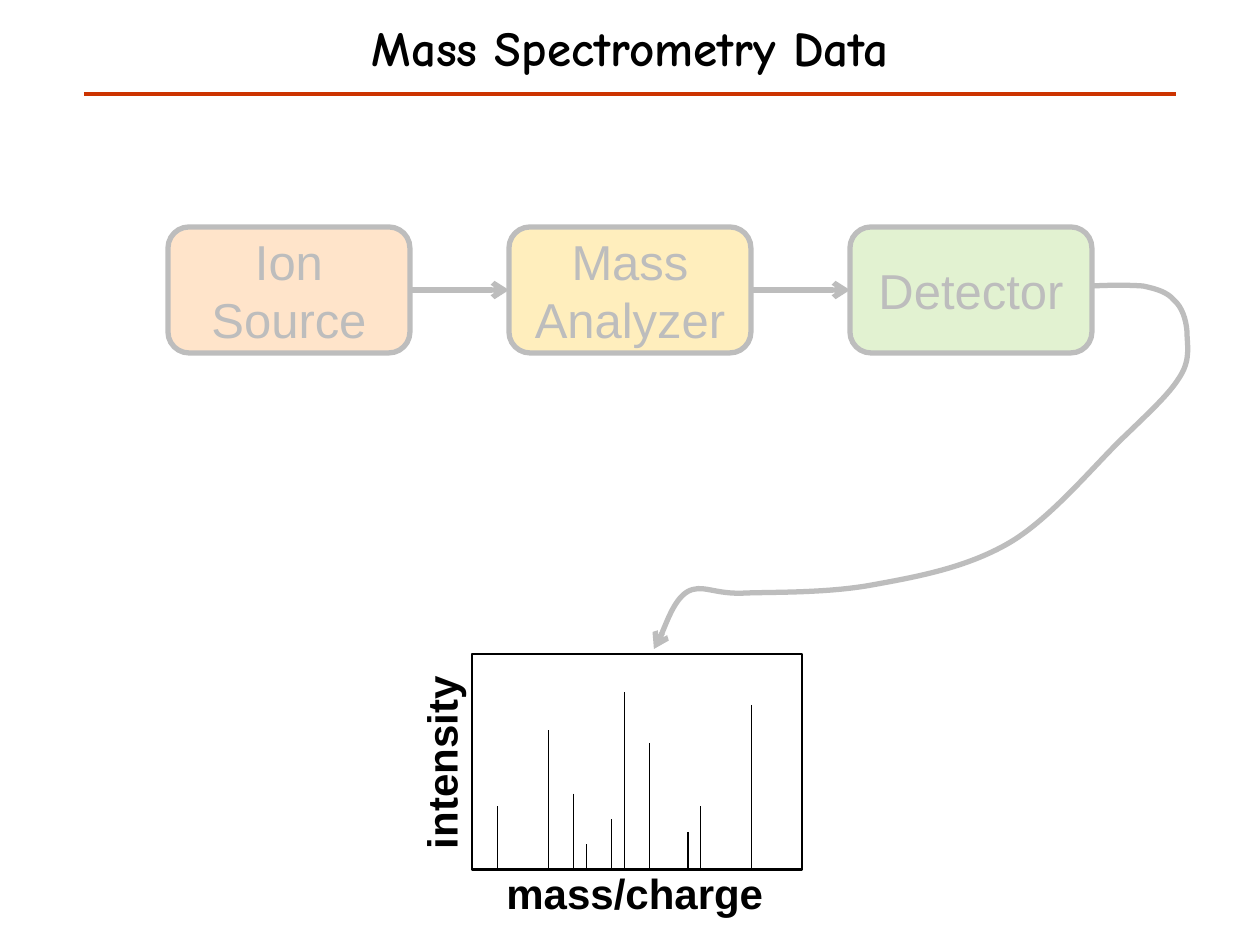
from itertools import pairwise

from lxml.etree import SubElement
from pptx import Presentation
from pptx.dml.color import RGBColor
from pptx.enum.shapes import MSO_CONNECTOR, MSO_SHAPE as Shape
from pptx.enum.text import MSO_ANCHOR, MSO_AUTO_SIZE, PP_ALIGN
from pptx.oxml.ns import qn
from pptx.util import Emu, Pt

PX = 914400 / 126
COLORS = {
    "ink": "000000", "paper": "FFFFFF", "rule": "CC3300",
    "source": "FF9933", "analyzer": "FFC000", "detector": "92D050",
}

STAGES = [("Ion Source", "source"), ("Mass Analyzer", "analyzer"), ("Detector", "detector")]
STAGE_LEFT, STAGE_TOP, STAGE_PITCH = 168, 227, 341
STAGE_WIDTH, STAGE_HEIGHT = 242, 126

# Spectrum grid: (mass/charge, intensity) of each peak, in steps
GRID_STEP = 12.7
GRID_COLUMNS, GRID_ROWS = 26, 17
SPECTRUM_LEFT, SPECTRUM_TOP = 472, 654
PEAKS = [(2, 5), (6, 11), (8, 6), (9, 2), (11, 4),
         (12, 14), (14, 10), (17, 3), (18, 5), (22, 13)]

# Start point, then three points for each cubic curve
SIGNAL_ROUTE = [
    (1092, 286),
    (1110, 285), (1129, 285), (1143, 286),
    (1157, 289), (1167, 292), (1174, 300),
    (1182, 307), (1186, 319), (1187, 331),
    (1187, 344), (1191, 358), (1181, 375),
    (1171, 392), (1155, 407), (1126, 435),
    (1097, 462), (1052, 518), (1009, 543),
    (966, 568), (916, 577), (872, 585),
    (828, 593), (776, 592), (746, 593),
    (714, 595), (702, 583), (687, 592),
    (673, 601), (663, 635), (656, 645),
    (651, 654), (653, 651), (654, 649),
]


def px(*lengths):
    return [Emu(round(length * PX)) for length in lengths]


def rgb(name):
    return RGBColor.from_string(COLORS[name])


def style_line(line, width, color="ink", arrow=False):
    line.color.rgb = rgb(color)
    line.width = Pt(width)
    if arrow:
        SubElement(line._get_or_add_ln(), qn("a:tailEnd"), type="arrow")


def style_text(frame, size, font="Arial", bold=False, align=PP_ALIGN.CENTER):
    for paragraph in frame.paragraphs:
        paragraph.alignment = align
        for run in paragraph.runs:
            run.font.name = font
            run.font.size = Pt(size)
            run.font.bold = bold
            run.font.color.rgb = rgb("ink")


def add_box(shapes, kind, bounds, fill):
    box = shapes.add_shape(kind, *px(*bounds))
    box.shadow.inherit = False
    box.fill.solid()
    box.fill.fore_color.rgb = rgb(fill)
    return box


def add_line(shapes, start, end, width, color="ink", arrow=False):
    connector = shapes.add_connector(MSO_CONNECTOR.STRAIGHT, *px(*start, *end))
    style_line(connector.line, width, color, arrow)
    SubElement(connector._element.spPr, qn("a:effectLst"))
    return connector


def add_title(slide):
    title = slide.shapes.title
    title.left, title.top, title.width, title.height = px(0, 0, 1260, 94)
    title.text_frame.text = "Mass Spectrometry Data"
    title.text_frame.vertical_anchor = MSO_ANCHOR.MIDDLE
    style_text(title.text_frame, 28, "Comic Neue", bold=True)
    add_line(slide.shapes, (84, 94), (1176, 94), 2.5, "rule")


def add_stage(shapes, index, name, fill):
    left = STAGE_LEFT + index * STAGE_PITCH
    stage = add_box(shapes, Shape.ROUNDED_RECTANGLE,
                    (left, STAGE_TOP, STAGE_WIDTH, STAGE_HEIGHT), fill)
    style_line(stage.line, 3)
    stage.text_frame.text = name
    stage.text_frame.word_wrap = True
    stage.text_frame.vertical_anchor = MSO_ANCHOR.MIDDLE
    style_text(stage.text_frame, 28)
    return stage


def add_pipeline(shapes):
    stages = [add_stage(shapes, i, *stage) for i, stage in enumerate(STAGES)]
    for sender, receiver in pairwise(stages):
        arrow = add_line(shapes, (0, 0), (1, 1), 3, arrow=True)
        arrow.begin_connect(sender, 3)
        arrow.end_connect(receiver, 1)


def add_spectrum(shapes):
    spectrum = shapes.add_group_shape().shapes
    width, height = GRID_COLUMNS * GRID_STEP, GRID_ROWS * GRID_STEP
    frame = add_box(spectrum, Shape.RECTANGLE,
                    (SPECTRUM_LEFT, SPECTRUM_TOP, width, height), "paper")
    style_line(frame.line, 1.5)
    base = SPECTRUM_TOP + height
    for mass, intensity in PEAKS:
        x = SPECTRUM_LEFT + mass * GRID_STEP
        add_line(spectrum, (x, base - intensity * GRID_STEP), (x, base), 0.75)


def add_axis_label(shapes, text, bounds, rotation=0):
    label = shapes.add_textbox(*px(*bounds))
    label.rotation = rotation
    label.text_frame.text = text
    label.text_frame.word_wrap = False
    label.text_frame.auto_size = MSO_AUTO_SIZE.SHAPE_TO_FIT_TEXT
    style_text(label.text_frame, 24, bold=True, align=PP_ALIGN.LEFT)


def add_curve(shapes, points):
    """Draw an arrow of cubic curves by merging each three segments into one."""
    builder = shapes.build_freeform(*points[0], scale=PX)
    builder.add_line_segments(points[1:], close=False)
    curve = builder.convert_to_shape()
    curve.shadow.inherit = False
    curve.fill.background()
    style_line(curve.line, 3, arrow=True)
    outline = next(curve._element.iter(qn("a:path")))
    segments = outline.findall(qn("a:lnTo"))
    for first in range(0, len(segments), 3):
        cubic = SubElement(outline, qn("a:cubicBezTo"))
        for segment in segments[first:first + 3]:
            cubic.append(segment[0])
            outline.remove(segment)


def add_veil(shapes):
    """Fade the pipeline with a translucent white sheet."""
    veil = add_box(shapes, Shape.RECTANGLE, (49, 147, 1211, 504), "paper")
    veil.line.fill.background()
    color = next(veil._element.spPr.iter(qn("a:srgbClr")))
    SubElement(color, qn("a:alpha"), val="74000")


def main():
    deck = Presentation()
    deck.slide_width, deck.slide_height = px(1260, 945)
    slide = deck.slides.add_slide(deck.slide_layouts[5])
    add_title(slide)
    add_pipeline(slide.shapes)
    add_spectrum(slide.shapes)
    add_axis_label(slide.shapes, "mass/charge", (494, 861, 285, 63))
    add_axis_label(slide.shapes, "intensity", (341, 730, 200, 63), rotation=270)
    add_curve(slide.shapes, SIGNAL_ROUTE)
    add_veil(slide.shapes)
    deck.save("out.pptx")


if __name__ == "__main__":
    main()
